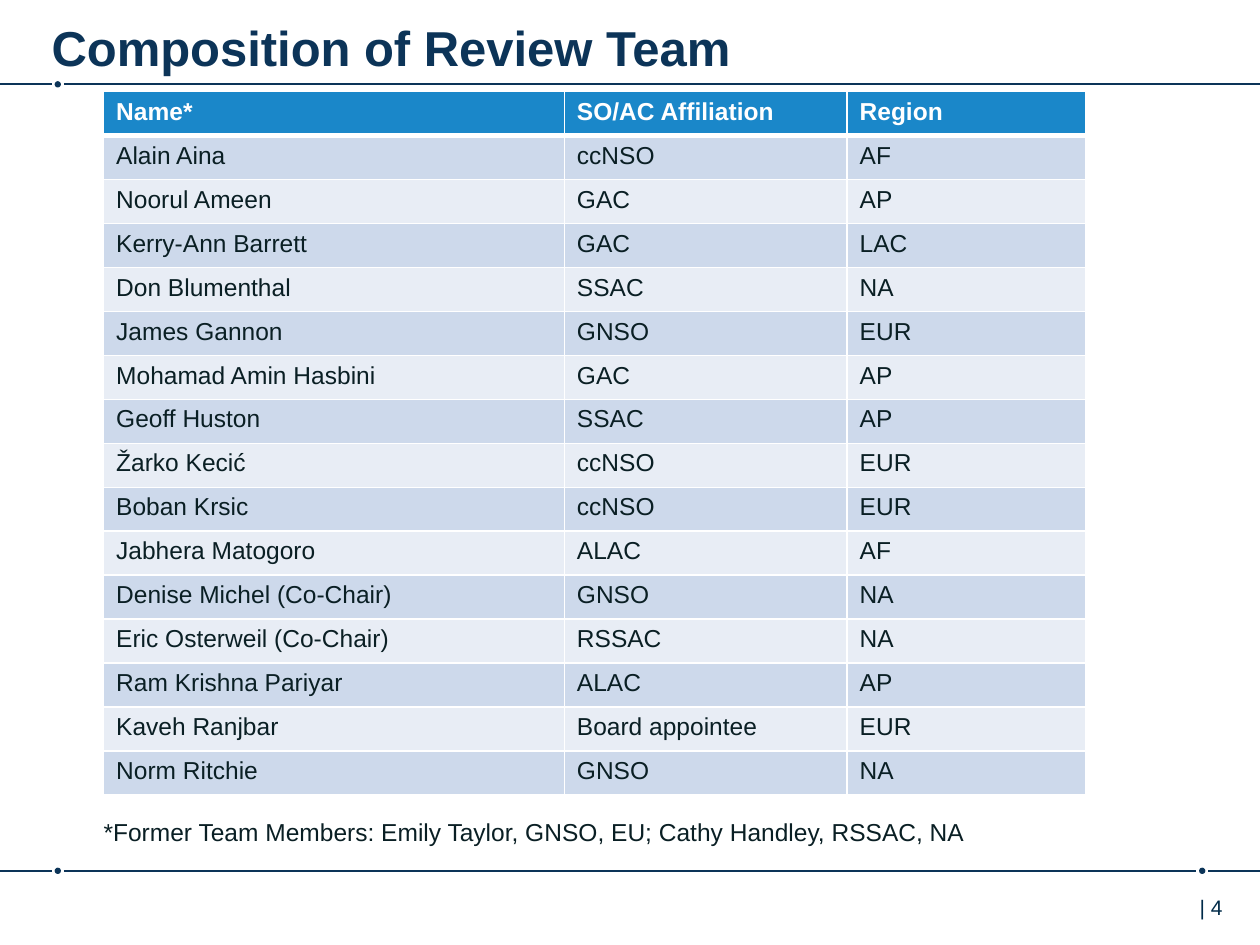
from pptx import Presentation
from pptx.dml.color import RGBColor
from pptx.enum.shapes import MSO_CONNECTOR, MSO_SHAPE
from pptx.enum.text import MSO_ANCHOR, MSO_AUTO_SIZE, PP_ALIGN
from pptx.oxml import parse_xml
from pptx.oxml.ns import nsdecls
from pptx.util import Pt

STRAIGHT = MSO_CONNECTOR.STRAIGHT
OVAL = MSO_SHAPE.OVAL
TOP = MSO_ANCHOR.TOP
NO_FIT = MSO_AUTO_SIZE.NONE
LEFT = PP_ALIGN.LEFT


class Theme:
    font = "Arial"
    navy = RGBColor.from_string("0C3458")
    ink = RGBColor.from_string("0A1F24")
    page_ink = RGBColor.from_string("002B49")
    white = RGBColor.from_string("FFFFFF")
    header = RGBColor.from_string("1A87C9")
    bands = (RGBColor.from_string("CDD9EB"), RGBColor.from_string("E8EDF5"))
    title_size, body_size, page_size = 28, 14, 12


HEADINGS = ("Name*", "SO/AC Affiliation", "Region")
MEMBERS = (
    ("Alain Aina", "ccNSO", "AF"),
    ("Noorul Ameen", "GAC", "AP"),
    ("Kerry-Ann Barrett", "GAC", "LAC"),
    ("Don Blumenthal", "SSAC", "NA"),
    ("James Gannon", "GNSO", "EUR"),
    ("Mohamad Amin Hasbini", "GAC", "AP"),
    ("Geoff Huston", "SSAC", "AP"),
    ("Žarko Kecić", "ccNSO", "EUR"),
    ("Boban Krsic", "ccNSO", "EUR"),
    ("Jabhera Matogoro", "ALAC", "AF"),
    ("Denise Michel (Co-Chair)", "GNSO", "NA"),
    ("Eric Osterweil (Co-Chair)", "RSSAC", "NA"),
    ("Ram Krishna Pariyar", "ALAC", "AP"),
    ("Kaveh Ranjbar", "Board appointee", "EUR"),
    ("Norm Ritchie", "GNSO", "NA"),
)


def write(frame, text, size, color, bold=False, margins=None):
    """Fill a text frame with one left-aligned line; margins run left, top, right, bottom."""
    frame.word_wrap = True
    if margins:
        (frame.margin_left, frame.margin_top,
         frame.margin_right, frame.margin_bottom) = map(Pt, margins)
    paragraph = frame.paragraphs[0]
    paragraph.text = text
    paragraph.alignment = LEFT
    font = paragraph.font
    font.name, font.size, font.bold = Theme.font, Pt(size), bold
    font.color.rgb = color


def set_borders(cell, top, bottom):
    """Draw white borders, one point wide at the sides."""
    properties = cell._tc.get_or_add_tcPr()
    for side, width in (("L", 1), ("R", 1), ("T", top), ("B", bottom)):
        properties.append(parse_xml(
            f'<a:ln{side} {nsdecls("a")} w="{Pt(width)}"><a:solidFill>'
            f'<a:srgbClr val="{Theme.white}"/></a:solidFill></a:ln{side}>'))


deck = Presentation()
deck.slide_width, deck.slide_height = Pt(720), Pt(540)
slide = deck.slides.add_slide(deck.slide_layouts[5])
shapes = slide.shapes

# Rules, broken by a small dot
DOT, GAP = 3.6, 3.5
for y, dot_centers in ((48.2, (33,)), (497.6, (33, 687))):
    start = 0
    for center in (*dot_centers, None):
        end = 720 if center is None else center - GAP
        rule = shapes.add_connector(STRAIGHT, Pt(start), Pt(y), Pt(end), Pt(y))
        rule.line.color.rgb = Theme.navy
        rule.line.width = Pt(1)
        rule._element.spPr.append(parse_xml(f'<a:effectLst {nsdecls("a")}/>'))
        if center is not None:
            dot = shapes.add_shape(OVAL, Pt(center - DOT / 2), Pt(y - DOT / 2), Pt(DOT), Pt(DOT))
            dot.shadow.inherit = False
            dot.fill.solid()
            dot.fill.fore_color.rgb = Theme.navy
            dot.line.fill.background()
            start = center + GAP

title = shapes.title
title.left, title.top, title.width, title.height = Pt(29.5), Pt(3.6), Pt(630.7), Pt(35.3)
title.text_frame.auto_size = NO_FIT
title.text_frame.vertical_anchor = TOP
write(title.text_frame, "Composition of Review Team", Theme.title_size, Theme.navy,
      bold=True, margins=(0, 6.5, 0, 3.6))

# Team table
TABLE_LEFT, TABLE_WIDTH, ROW_HEIGHT = 59.2, 561.4, 25.12
team = shapes.add_table(len(MEMBERS) + 1, len(HEADINGS), Pt(TABLE_LEFT), Pt(52.4),
                        Pt(TABLE_WIDTH), Pt(ROW_HEIGHT * (len(MEMBERS) + 1))).table
for column, width in zip(team.columns, (263.3, 161.6, 136.5)):
    column.width = Pt(width)
for row_index, values in enumerate((HEADINGS, *MEMBERS)):
    team.rows[row_index].height = Pt(ROW_HEIGHT)
    is_header = row_index == 0
    for column_index, value in enumerate(values):
        cell = team.cell(row_index, column_index)
        set_borders(cell, top=3 if row_index == 1 else 1, bottom=3 if is_header else 1)
        cell.fill.solid()
        cell.fill.fore_color.rgb = Theme.header if is_header else Theme.bands[(row_index - 1) % 2]
        write(cell.text_frame, value, Theme.body_size,
              Theme.white if is_header else Theme.ink, bold=is_header)

footnote = shapes.add_textbox(Pt(TABLE_LEFT), Pt(466.8), Pt(TABLE_WIDTH), Pt(17))
write(footnote.text_frame,
      "*Former Team Members: Emily Taylor, GNSO, EU; Cathy Handley, RSSAC, NA",
      Theme.body_size, Theme.ink, margins=(0, 0, 0, 0))

page_number = shapes.add_textbox(Pt(669), Pt(507.6), Pt(51), Pt(28.8))
write(page_number.text_frame, "| 4", Theme.page_size, Theme.page_ink,
      margins=(16.5, 3.6, 0, 3.6))

deck.save("out.pptx")
